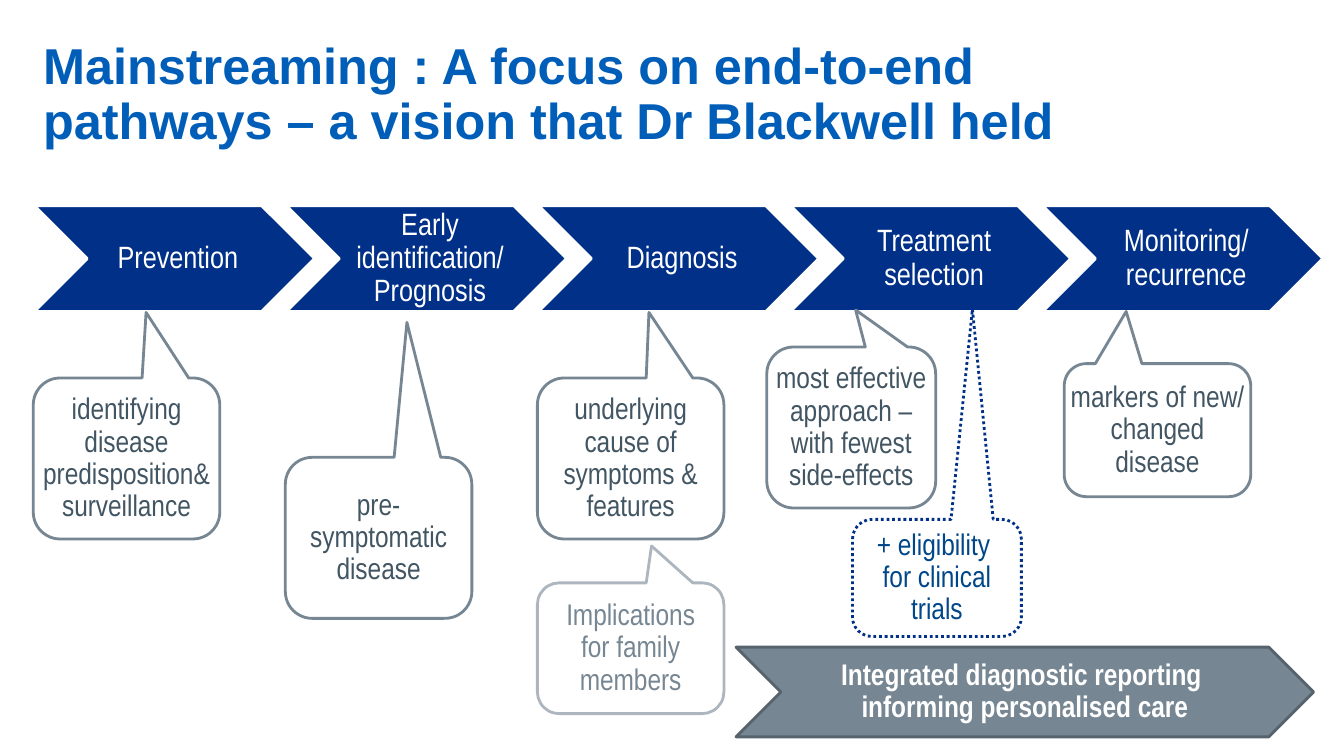
"""Build the slide on end-to-end diagnostic pathways."""
from pptx import Presentation
from pptx.dml.color import RGBColor
from pptx.enum.dml import MSO_LINE
from pptx.enum.shapes import MSO_SHAPE
from pptx.enum.text import MSO_ANCHOR, PP_ALIGN
from pptx.util import Inches, Pt

WIDTH, HEIGHT = 13.33, 7.5
COLUMN, PERCENT = 2.5, HEIGHT / 100
MARGIN = 0.33
COLORS = {
    "title": "005EB8", "navy": "003087", "white": "FFFFFF", "slate": "768692",
    "dark slate": "57636C", "pale slate": "ADB6BE", "ink": "425563", "trial": "00478A",
}

TITLE = "Mainstreaming : A focus on end-to-end pathways – a vision that Dr Blackwell held"
STAGES = ["Prevention", "Early identification/ Prognosis", "Diagnosis",
          "Treatment selection", "Monitoring/ recurrence"]
REPORTING = "Integrated diagnostic reporting \vinforming personalised care"

WIDE, NARROW = 0.74, 0.67
STANDARD = ("slate", "ink", None)
TRIAL = ("navy", "trial", MSO_LINE.ROUND_DOT)
FAMILY = ("pale slate", "slate", None)
# Text, left and width in columns, top and height in percent, pointer tip, style
CALLOUTS = [
    ("identifying disease predisposition& surveillance", 0, WIDE, 50, 21.3, (0.105, -0.907), STANDARD),
    ("pre-symptomatic disease", 1, WIDE, 60.5, 21.3, (0.152, -1.338), STANDARD),
    ("underlying cause of symptoms & features", 2, WIDE, 50, 21.3, (0.098, -0.907), STANDARD),
    ("most effective approach – with fewest side-effects", 2.91, NARROW, 45.9, 21.3, (0.026, -0.73), STANDARD),
    ("markers of new/ changed disease", 4.09, WIDE, 48.1, 17.6, (-0.168, -0.892), STANDARD),
    ("+ eligibility \vfor clinical trials", 3.25, NARROW, 68.7, 15.5, (0.21, -2.295), TRIAL),
    ("Implications\nfor family members", 2, WIDE, 77.1, 17.3, (0.112, -0.782), FAMILY),
]

STAGE_TEXT = {"size": Pt(22), "name": "Arial Narrow", "bold": False}
CALLOUT_TEXT = {"size": Pt(21.3), "name": "Arial Narrow", "bold": False}
REPORTING_TEXT = {**CALLOUT_TEXT, "bold": True}
TITLE_TEXT = {"size": Pt(36), "name": "Arial", "bold": True}


def color(name):
    return RGBColor.from_string(COLORS[name])


def write(box, text, style, ink, insets, anchor=MSO_ANCHOR.MIDDLE, align=PP_ALIGN.CENTER):
    frame = box.text_frame
    frame.word_wrap = True
    frame.vertical_anchor = anchor
    for side, inset in zip(("left", "top", "right", "bottom"), insets):
        setattr(frame, f"margin_{side}", Inches(inset))
    frame.text = text
    for para in frame.paragraphs:
        para.alignment = align
        para.line_spacing = 0.9
        for span in para.runs:
            for key, value in style.items():
                setattr(span.font, key, value)
            span.font.color.rgb = color(ink)


def draw(page, preset, place, fill, line):
    shape = page.shapes.add_shape(preset, *map(Inches, place))
    shape.shadow.inherit = False
    shape.fill.solid()
    shape.fill.fore_color.rgb = color(fill)
    shape.line.color.rgb = color(line)
    shape.line.width = Pt(2)
    return shape


def main():
    deck = Presentation()
    deck.slide_width, deck.slide_height = Inches(WIDTH), Inches(HEIGHT)
    page = deck.slides.add_slide(deck.slide_layouts[6])

    title = page.shapes.add_textbox(*map(Inches, (MARGIN, 0.81, 10.73, 0.73)))
    write(title, TITLE, TITLE_TEXT, "title", (0.1, 0.05, 0.1, 0.05),
          MSO_ANCHOR.BOTTOM, PP_ALIGN.LEFT)

    for index, stage in enumerate(STAGES):
        place = (MARGIN + 0.01 + index * COLUMN, 2.04, 2.78, 1.05)
        chevron = draw(page, MSO_SHAPE.CHEVRON, place, "navy", "white")
        write(chevron, stage, STAGE_TEXT, "white", (0.1, 0.03, 0.03, 0.03))

    for text, left, width, top, height, tip, (line, ink, dash) in CALLOUTS:
        place = (MARGIN + left * COLUMN, top * PERCENT, width * COLUMN, height * PERCENT)
        callout = draw(page, MSO_SHAPE.ROUNDED_RECTANGULAR_CALLOUT, place, "white", line)
        callout.adjustments[0], callout.adjustments[1] = tip
        if dash:
            callout.line.dash_style = dash
        write(callout, text, CALLOUT_TEXT, ink, (0, 0.05, 0, 0.05))

    reporting = draw(page, MSO_SHAPE.CHEVRON, (7.3, 6.42, 5.73, 0.89), "slate", "dark slate")
    write(reporting, REPORTING, REPORTING_TEXT, "white", (0.1, 0.05, 0.1, 0.05))

    deck.save("out.pptx")


if __name__ == "__main__":
    main()
